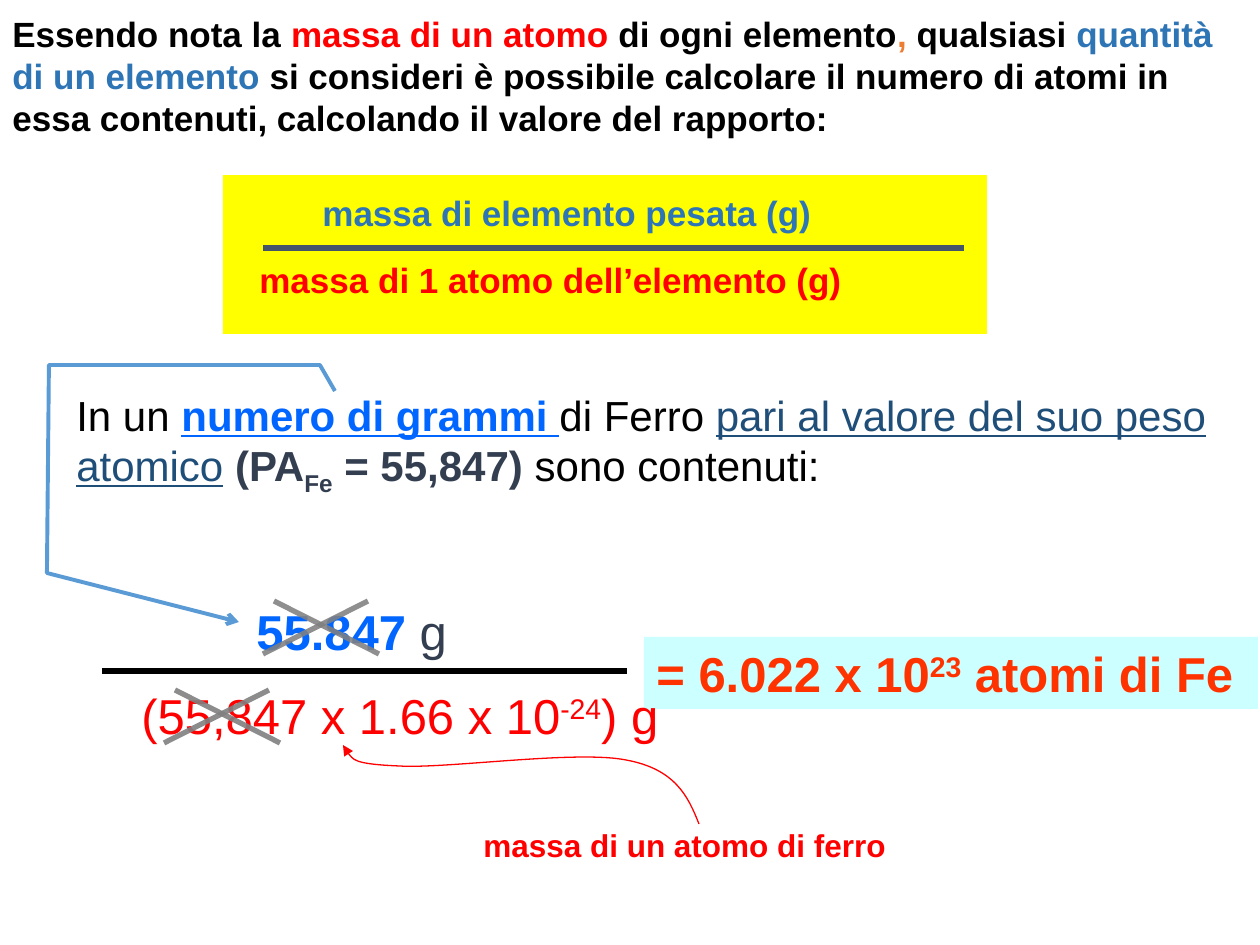
from pptx import Presentation
from pptx.dml.color import RGBColor
from pptx.enum.shapes import MSO_CONNECTOR as Connector, MSO_SHAPE as Shape
from pptx.enum.text import MSO_ANCHOR as Anchor, PP_ALIGN as Align
from pptx.oxml.ns import qn
from pptx.util import Pt
from lxml.etree import SubElement

PX = 914400 / 126
THEME = {
    "font": "Arial",
    "black": "000000", "red": "FF0000", "blue": "2E75B6", "orange": "ED7D31",
    "bright": "0066FF", "navy": "1F4E79", "slate": "333F50", "rule": "44546A",
    "result": "FF3300", "cyan": "CCFFFF", "yellow": "FFFF00",
    "strike": "808080", "arrow": "5B9BD5",
    "small": 18, "normal": 20, "body": 24, "formula": 28,
}
BOLD, UNDERLINE = {"bold": True}, {"underline": True}

# Content: box (left, top, width, height), size, fill, runs (text, colour, format, baseline %)
PROBLEM = [((64, 383, 1196, 115), "body", None, [
    ("In un ", "black"),
    ("numero di grammi ", "bright", BOLD | UNDERLINE),
    ("di Ferro ", "black"),
    ("pari al valore del suo peso atomico", "navy", UNDERLINE),
    (" ", "black"),
    ("(PA", "slate", BOLD), ("Fe", "slate", BOLD, -25), (" = 55,847) ", "slate", BOLD),
    ("sono contenuti:", "black")])]
CALCULATION = [
    ((644, 637, 614, 72), "formula", "cyan", [
        ("= 6.022 x 10", "result", BOLD), ("23", "result", BOLD, 30),
        (" atomi di Fe", "result", BOLD)]),
    ((244, 595, 218, 72), "formula", None, [("55.847 ", "bright", BOLD), ("g", "slate")]),
    ((129, 679, 556, 72), "formula", None, [
        ("(55,847 x 1.66 x 10", "red"), ("-24", "red", {}, 30), (") g", "red")]),
]
ATOM_MASS = [((471, 820, 456, 50), "small", None,
              [("massa di un atomo di ferro", "red", BOLD)])]
RATIO = [
    ((247, 252, 619, 55), "normal", "yellow",
     [("massa di 1 atomo dell’elemento (g)", "red", BOLD)]),
    ((310, 185, 524, 55), "normal", "yellow",
     [("massa di elemento pesata (g)", "blue", BOLD)]),
]
INTRO = [((0, 6, 1260, 140), "normal", None, [
    ("Essendo nota la ", "black", BOLD), ("massa di un atomo", "red", BOLD),
    (" di ogni elemento", "black", BOLD), (", ", "orange", BOLD),
    ("qualsiasi ", "black", BOLD), ("quantità di un elemento ", "blue", BOLD),
    ("si consideri è possibile calcolare il numero di atomi in essa contenuti, "
     "calcolando il valore del rapporto:", "black", BOLD)])]

RATIO_PANEL = (223, 175, 764, 159)
RATIO_BAR = (263, 248, 964, 248)
FRACTION_BAR = (102, 671, 627, 671)
STRIKES = [(164, 690, 89), (263, 601, 87)]  # left, top, opacity %
STRIKE_WIDTH, STRIKE_HEIGHT, STRIKE_SHIFT = 105, 53, 11
MASS_CURVE = [(699, 824), (688, 796), (675, 769), (626, 760), (576, 750),
              (446, 769), (399, 766), (352, 764), (347, 754), (343, 745)]
GRAMS_PATH = [(335, 391), (320, 365), (49, 365), (47, 573), (239, 622)]


def colour(name):
    return RGBColor.from_string(THEME[name])


def emu(lengths):
    return [round(length * PX) for length in lengths]


def set_line(shape, name, width, head=None, opacity=None):
    shape.line.color.rgb = colour(name)
    shape.line.width = Pt(width)
    line = shape.line._get_or_add_ln()
    if opacity:
        SubElement(line.find(".//" + qn("a:srgbClr")), qn("a:alpha"), val=str(opacity * 1000))
    if head:
        SubElement(line, qn("a:tailEnd"), type=head)


def add_line(ends, name, width, **options):
    line = shapes.add_connector(Connector.STRAIGHT, *emu(ends))
    set_line(line, name, width, **options)
    SubElement(line._element.spPr, qn("a:effectLst"))


def add_rectangle(box, fill):
    shape = shapes.add_shape(Shape.RECTANGLE, *emu(box))
    shape.shadow.inherit = False
    shape.fill.solid()
    shape.fill.fore_color.rgb = colour(fill)
    shape.line.fill.background()
    return shape


def add_texts(items):
    for box, size, fill, runs in items:
        shape = add_rectangle(box, fill) if fill else shapes.add_textbox(*emu(box))
        frame = shape.text_frame
        frame.word_wrap = True
        frame.vertical_anchor = Anchor.TOP
        paragraph = frame.paragraphs[0]
        paragraph.alignment = Align.LEFT
        for text, name, *rest in runs:
            style, baseline = (rest + [{}, 0][len(rest):])
            run = paragraph.add_run()
            run.text = text
            run.font.color.rgb = colour(name)
            values = {"name": THEME["font"], "size": Pt(THEME[size]), "bold": False}
            for key, value in (values | style).items():
                setattr(run.font, key, value)
            if baseline:
                run.font._element.set("baseline", str(baseline * 1000))


def add_path(points, name, width, head, curved=False):
    builder = shapes.build_freeform(*points[0], scale=PX)
    builder.add_line_segments(points[1:], close=False)
    shape = builder.convert_to_shape()
    shape.shadow.inherit = False
    shape.fill.background()
    set_line(shape, name, width, head)
    if curved:  # every three points make one cubic segment
        outline = shape._element.find(".//" + qn("a:path"))
        segments = outline.findall(qn("a:lnTo"))
        for start in range(0, len(segments), 3):
            cubic = SubElement(outline, qn("a:cubicBezTo"))
            for segment in segments[start:start + 3]:
                cubic.append(segment[0])
                outline.remove(segment)


presentation = Presentation()
presentation.slide_width, presentation.slide_height = emu((1260, 945))
slide = presentation.slides.add_slide(presentation.slide_layouts[6])
shapes = slide.shapes

# Worked example with the cancelled numbers
add_texts(PROBLEM + CALCULATION)
add_line(FRACTION_BAR, "black", 3)
for left, top, opacity in STRIKES:
    right, bottom = left + STRIKE_WIDTH, top + STRIKE_HEIGHT
    add_line((right, top, left, bottom), "strike", 3, opacity=opacity)
    add_line((left + STRIKE_SHIFT, top, right + STRIKE_SHIFT, bottom), "strike", 3, opacity=opacity)
add_texts(ATOM_MASS)
add_path(MASS_CURVE, "red", 0.75, "triangle", curved=True)

# General ratio
add_rectangle(RATIO_PANEL, "yellow")
add_texts(RATIO)
add_line(RATIO_BAR, "rule", 3)

# Introduction and the arrow to the grams
add_texts(INTRO)
add_path(GRAMS_PATH, "arrow", 2.25, "arrow")

presentation.save("out.pptx")
